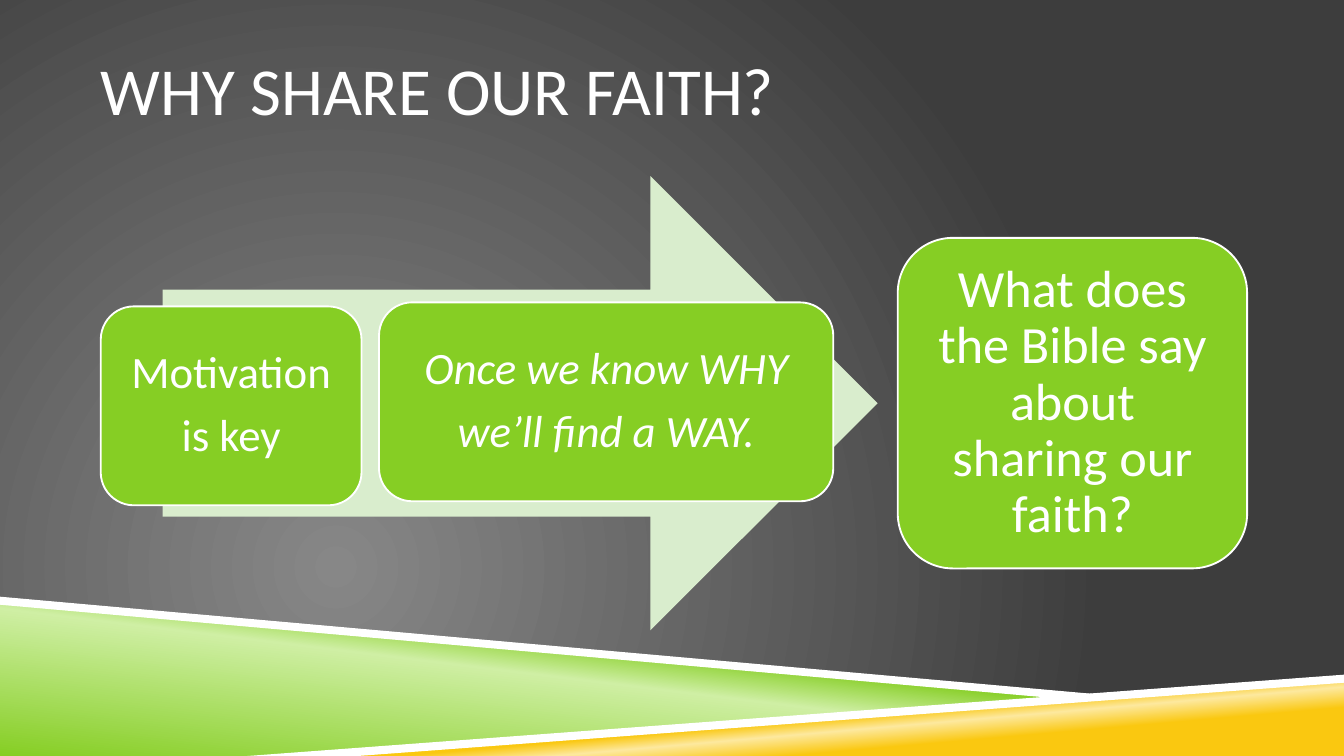
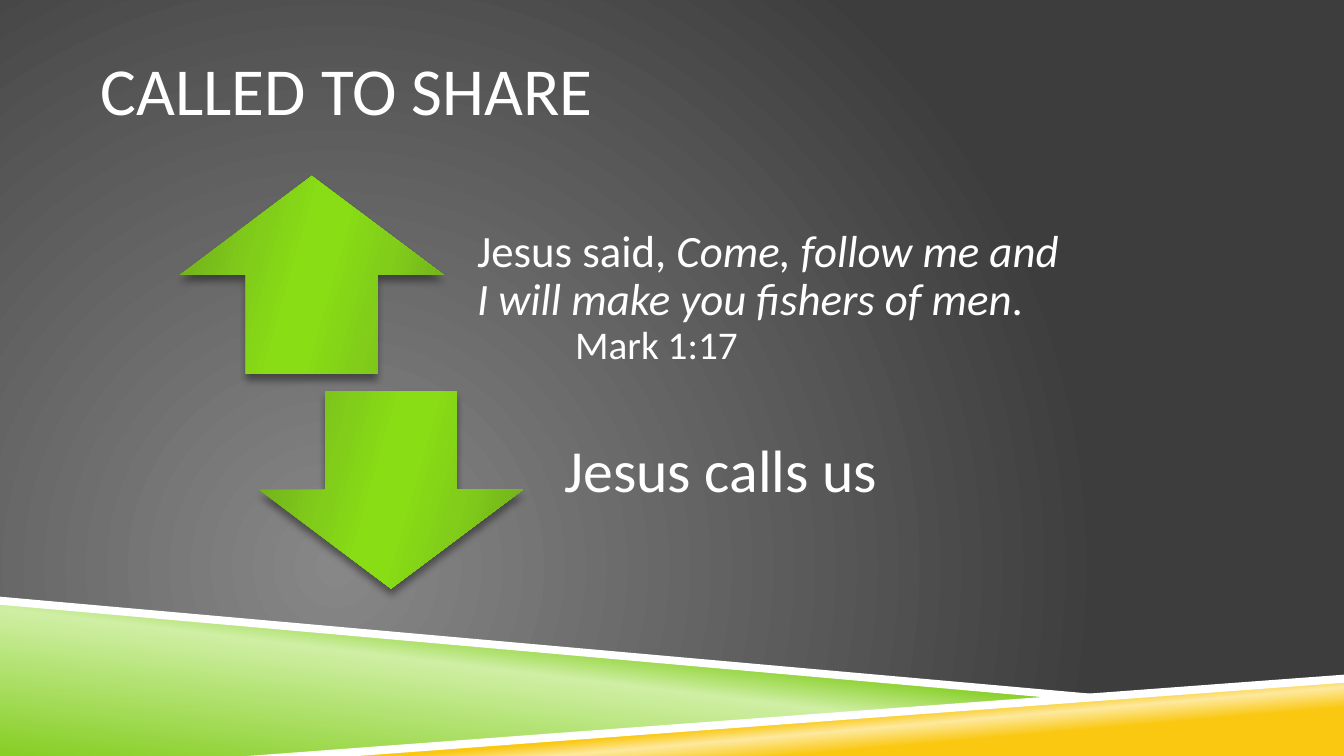
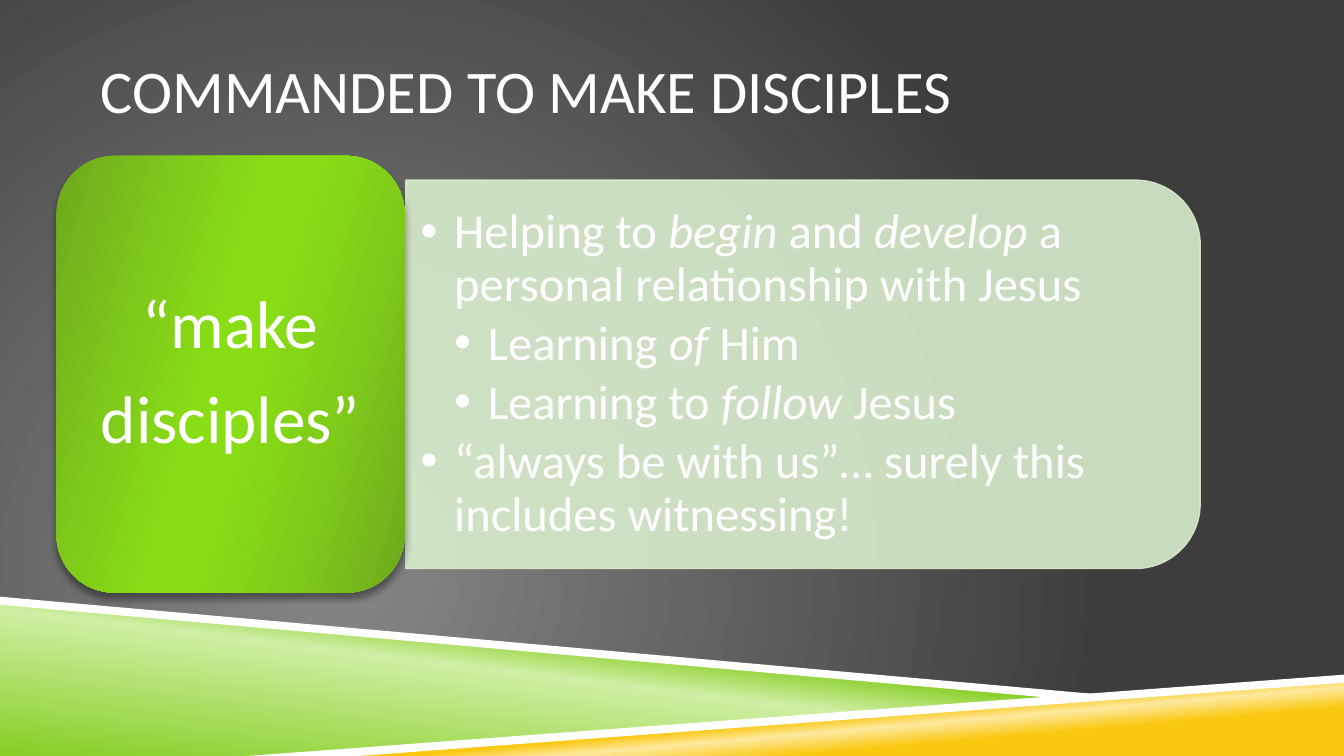
from lxml.etree import SubElement
from pptx import Presentation
from pptx.dml.color import RGBColor
from pptx.enum.shapes import MSO_SHAPE
from pptx.enum.text import MSO_ANCHOR, PP_ALIGN
from pptx.oxml.ns import qn
from pptx.util import Inches, Pt

WIDTH, HEIGHT = 10, 5.625
MARGIN = 0.75
FONT = "Calibri"
COLORS = {"white": "FFFFFF", "green": "86CE24", "mist": "D9EDCD"}

# Gradients: (position in percent, colour) stops and an angle
NIGHT = [(0, "878787"), (100, "3D3D3D")]
GLOSS = ([(0, "6EA91D"), (30, "81CD1A"), (45, "88DD15"),
          (55, "88DD15"), (73, "81CD1A"), (100, "6EA91D")], 16)
GREEN_BAND = ([(0, "86CE24"), (52, "CFEFA4"), (66, "86CE24")], 277)
GOLD_BAND = ([(28, "FAC810"), (40, "FDE99F"), (48, "FAC810")], 265)

# Bands at the foot of every slide: outline and fill
BANDS = [
    ([(0, 4.48), (7.92, 5.19), (2, HEIGHT), (0, HEIGHT)], GREEN_BAND),
    ([(1.98, HEIGHT), (10, 5.04), (10, HEIGHT)], GOLD_BAND),
    ([(0, 4.44), (0, 4.5), (7.9, 5.2), (8.32, 5.18)], COLORS["white"]),
    ([(10, 5.02), (1.84, HEIGHT), (2.66, HEIGHT), (10, 5.08)], COLORS["white"]),
]

# Slide content; *asterisks* enclose italic words
MOTIVATION_TITLE = "WHY SHARE OUR FAITH?"
MOTIVATION_CARDS = [  # frame, text size, inset, paragraphs
    ((MARGIN, 2.28, 1.94, 1.48), 24, 0.1, ["Motivation", "is key"]),
    ((2.82, 2.25, 3.38, 1.48), 24, 0.1,
     ["*Once we know WHY*", "*we’ll find a WAY.*"]),
    ((6.68, 1.77, 2.6, 2.46), 28, 0.12,
     ["What does the Bible say about sharing our faith?"]),
]
CALL_TITLE = "CALLED TO SHARE"
CALL_QUOTE = "Jesus said, *Come, follow me and I will make you fishers of men*."
CALL_REFERENCE = "Mark 1:17"
CALL_ANSWER = "Jesus calls us"
DISCIPLES_TITLE = "COMMANDED TO MAKE DISCIPLES"
DISCIPLES_LABEL = ["“make", "disciples”"]
DISCIPLES_POINTS = [  # level, text
    (1, "Helping to *begin* and *develop* a personal relationship with Jesus"),
    (2, "Learning *of* Him"),
    (2, "Learning to *follow* Jesus"),
    (1, "“always be with us”… surely this includes witnessing!"),
]


def rgb(color):
    return RGBColor.from_string(color)


def set_gradient(fill_parent, stops, angle=None):
    """Replace a solid fill by a linear gradient, or a radial one without angle."""
    solid = fill_parent.find(qn("a:solidFill"))
    gradient = solid.makeelement(qn("a:gradFill"), {"rotWithShape": "1"})
    stop_list = SubElement(gradient, qn("a:gsLst"))
    for position, color in stops:
        stop = SubElement(stop_list, qn("a:gs"), pos=str(position * 1000))
        SubElement(stop, qn("a:srgbClr"), val=color)
    if angle is None:
        circle = SubElement(gradient, qn("a:path"), {"path": "circle"})
        SubElement(circle, qn("a:fillToRect"),
                   l="50000", t="100000", r="100000", b="50000")
    else:
        SubElement(gradient, qn("a:lin"), ang=str(angle * 60000), scaled="0")
    fill_parent.replace(solid, gradient)


def paint(shape, fill, line=None, line_width=1):
    shape.shadow.inherit = False
    shape.fill.solid()
    if isinstance(fill, tuple):
        set_gradient(shape._element.spPr, *fill)
    else:
        shape.fill.fore_color.rgb = rgb(fill)
    if line:
        shape.line.color.rgb = rgb(line)
        shape.line.width = Pt(line_width)
    else:
        shape.line.fill.background()


def add_panel(slide, kind, frame, fill, line=None, line_width=1):
    shape = slide.shapes.add_shape(kind, *map(Inches, frame))
    paint(shape, fill, line, line_width)
    return shape


def add_glossy(slide, kind, frame):
    shape = add_panel(slide, kind, frame, GLOSS)
    effects = shape._element.spPr.find(qn("a:effectLst"))
    shadow = SubElement(effects, qn("a:outerShdw"), blurRad=str(Pt(4)),
                        dist=str(Pt(3.3)), dir="5400000", rotWithShape="0")
    color = SubElement(shadow, qn("a:srgbClr"), val="000000")
    SubElement(color, qn("a:alpha"), val="40000")
    return shape


def add_text_box(slide, frame):
    return slide.shapes.add_textbox(*map(Inches, frame))


def set_frame(shape, insets):
    """Centre the text vertically; insets are left, top, right, bottom."""
    frame = shape.text_frame
    frame.word_wrap = True
    frame.vertical_anchor = MSO_ANCHOR.MIDDLE
    (frame.margin_left, frame.margin_top,
     frame.margin_right, frame.margin_bottom) = map(Inches, insets)
    return frame


def add_runs(paragraph, text, size):
    for index, part in enumerate(text.split("*")):
        if part:
            run = paragraph.add_run()
            run.text = part
            run.font.name = FONT
            run.font.size = Pt(size)
            run.font.italic = index % 2 == 1
            run.font.color.rgb = rgb(COLORS["white"])


def write(shape, texts, size, insets, align=PP_ALIGN.LEFT, gap=0.33):
    """Write one paragraph per text; gap is a share of the text size."""
    frame = set_frame(shape, insets)
    for index, text in enumerate(texts):
        paragraph = frame.add_paragraph() if index else frame.paragraphs[0]
        paragraph.alignment = align
        paragraph.line_spacing = 0.9
        paragraph.space_after = Pt(round(size * gap, 1))
        add_runs(paragraph, text, size)
    return frame.paragraphs


def indent(paragraph, left, hanging=0.0):
    properties = paragraph._p.get_or_add_pPr()
    properties.set("marL", str(Inches(left)))
    properties.set("indent", str(-Inches(hanging)))
    return properties


def set_title(slide, text, size=36):
    title = slide.shapes.title
    title.left, title.top = Inches(MARGIN), Inches(0.23)
    title.width, title.height = Inches(WIDTH - 2 * MARGIN), Inches(0.94)
    write(title, [text], size, (0, 0.05, 0, 0.05), gap=0)


def dress_layout(layout, slide):
    """Give the layout its background and bands, drawn by way of a slide."""
    layout.background.fill.solid()
    set_gradient(layout._element.find(".//" + qn("p:bgPr")), NIGHT)
    for placeholder in list(layout.placeholders)[1:]:
        placeholder._element.getparent().remove(placeholder._element)
    for order, (points, fill) in enumerate(BANDS):
        corners = [(Inches(x), Inches(y)) for x, y in points]
        builder = slide.shapes.build_freeform(*corners[0])
        builder.add_line_segments(corners[1:], close=True)
        band = builder.convert_to_shape()
        paint(band, fill)
        band.name = f"Band {order + 1}"
        band._element.nvSpPr.cNvPr.set("id", str(10 + order))
        layout.shapes._spTree.insert(2 + order, band._element)


def build_motivation(slide):
    set_title(slide, MOTIVATION_TITLE)
    add_panel(slide, MSO_SHAPE.RIGHT_ARROW, (1.21, 1.31, 5.32, 3.38),
              COLORS["mist"])
    for frame, size, inset, texts in MOTIVATION_CARDS:
        card = add_panel(slide, MSO_SHAPE.ROUNDED_RECTANGLE, frame,
                         COLORS["green"], COLORS["white"])
        write(card, texts, size, [inset] * 4, PP_ALIGN.CENTER)


def build_call(slide):
    set_title(slide, CALL_TITLE)
    width, height = 1.96, 1.47
    text_boxes = []
    for row, kind in enumerate([MSO_SHAPE.UP_ARROW, MSO_SHAPE.DOWN_ARROW]):
        left, top = 1.34 + 0.59 * row, 1.31 + 1.6 * row
        add_glossy(slide, kind, (left, top, width, height))
        text_boxes.append(add_text_box(slide, (left + 2.02, top, 4.83, height)))
    quote_box, answer_box = text_boxes
    quote, reference = write(quote_box, [CALL_QUOTE, CALL_REFERENCE], 24,
                             (0.19, 0.35, 0.19, 0), gap=0)
    indent(reference, 0.73)
    reference.runs[0].font.size = Pt(21)
    write(answer_box, [CALL_ANSWER], 32, (0.25, 0, 0.25, 0.25))


def build_disciples(slide):
    set_title(slide, DISCIPLES_TITLE, 32.4)
    # Panel turned on its side, so that its round corners face right
    panel = add_panel(slide, MSO_SHAPE.ROUND_2_SAME_RECTANGLE,
                      (4.53, -0.17, 2.89, 5.91), COLORS["mist"],
                      COLORS["mist"], 0.75)
    panel.rotation = 90
    for color in panel._element.spPr.iter(qn("a:srgbClr")):
        SubElement(color, qn("a:alpha"), val="90000")

    points_box = add_text_box(slide, (3.02, 1.48, 5.77, 2.61))
    paragraphs = write(points_box, [text for _, text in DISCIPLES_POINTS], 26,
                       (0.11, 0.05, 0.11, 0.05), gap=0.14)
    for paragraph, (level, _) in zip(paragraphs, DISCIPLES_POINTS):
        properties = indent(paragraph, 0.25 * level, 0.25)
        SubElement(properties, qn("a:buFont"), typeface="Arial")
        SubElement(properties, qn("a:buChar"), char="•")
        paragraph.level = level

    label = add_glossy(slide, MSO_SHAPE.ROUNDED_RECTANGLE,
                       (0.42, 1.16, 2.59, 3.25))
    write(label, DISCIPLES_LABEL, 36, (0.15, 0.07, 0.15, 0.07), PP_ALIGN.CENTER)


def main():
    presentation = Presentation()
    presentation.slide_width = Inches(WIDTH)
    presentation.slide_height = Inches(HEIGHT)
    layout = presentation.slide_layouts[5]
    builders = [build_motivation, build_call, build_disciples]
    for index, build in enumerate(builders):
        slide = presentation.slides.add_slide(layout)
        if index == 0:
            dress_layout(layout, slide)
        build(slide)
    presentation.save("out.pptx")


if __name__ == "__main__":
    main()
